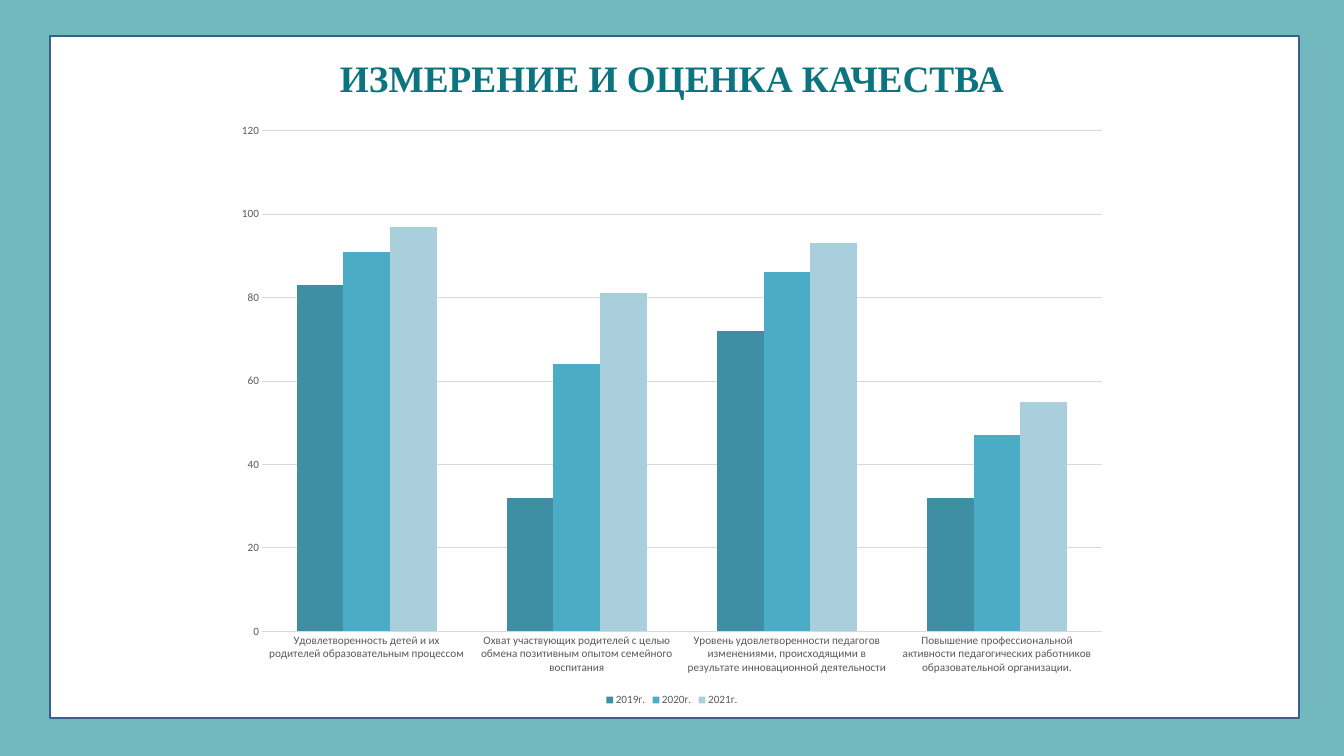
from dataclasses import dataclass

from pptx import Presentation
from pptx.chart.data import CategoryChartData
from pptx.dml.color import RGBColor
from pptx.enum.chart import XL_CHART_TYPE, XL_LEGEND_POSITION, XL_TICK_MARK
from pptx.enum.shapes import MSO_SHAPE
from pptx.enum.text import MSO_ANCHOR, MSO_AUTO_SIZE, PP_ALIGN
from pptx.slide import Slide
from pptx.text.text import Font
from pptx.util import Pt


@dataclass(frozen=True)
class Box:
    left: float
    top: float
    width: float
    height: float

    def size(self) -> tuple:
        return Pt(self.left), Pt(self.top), Pt(self.width), Pt(self.height)


@dataclass(frozen=True)
class Year:
    name: str
    marks: tuple
    color: str


WIDTH, HEIGHT = 1440, 810
GRAY = "595959"
GOALS = (
    "Удовлетворенность детей и их родителей образовательным процессом",
    "Охват участвующих родителей с целью обмена позитивным опытом семейного воспитания",
    "Уровень удовлетворенности педагогов изменениями, происходящими в результате инновационной деятельности",
    "Повышение профессиональной активности педагогических работников образовательной организации.",
)
YEARS = (
    Year("2019г.", (83, 32, 72, 32), "3E8FA4"),
    Year("2020г.", (91, 64, 86, 47), "4BACC6"),
    Year("2021г.", (97, 81, 93, 55), "A9CEDC"),
)


def paint(target, color: str) -> None:
    target.solid()
    target.fore_color.rgb = RGBColor.from_string(color)


def style(font: Font, name: str, size: float, color: str, bold: bool = False) -> None:
    font.name = name
    font.size = Pt(size)
    font.bold = bold
    paint(font.fill, color)


def add_panel(slide: Slide, box: Box) -> None:
    panel = slide.shapes.add_shape(MSO_SHAPE.RECTANGLE, *box.size())
    panel.shadow.inherit = False
    paint(panel.fill, "FFFFFF")
    paint(panel.line.fill, "3A5F8C")
    panel.line.width = Pt(2)


def add_title(slide: Slide, box: Box, text: str) -> None:
    frame = slide.shapes.add_textbox(*box.size()).text_frame
    frame.word_wrap = True
    frame.auto_size = MSO_AUTO_SIZE.SHAPE_TO_FIT_TEXT
    frame.vertical_anchor = MSO_ANCHOR.TOP
    line = frame.paragraphs[0]
    line.alignment = PP_ALIGN.CENTER
    run = line.add_run()
    run.text = text
    style(run.font, "Times New Roman", 40, "0B747F", True)


def add_bars(slide: Slide, box: Box) -> None:
    data = CategoryChartData()
    data.categories = GOALS
    for year in YEARS:
        data.add_series(year.name, year.marks)
    kind = XL_CHART_TYPE.COLUMN_CLUSTERED
    chart = slide.shapes.add_chart(kind, *box.size(), data).chart
    style(chart.font, "Calibri", 10, "000000")
    chart.has_title = False

    plot = chart.plots[0]
    plot.gap_width = 150
    plot.overlap = 0
    plot.vary_by_categories = False
    for bars, year in zip(plot.series, YEARS):
        paint(bars.format.fill, year.color)
        bars.invert_if_negative = False

    for axis in (chart.category_axis, chart.value_axis):
        axis.major_tick_mark = XL_TICK_MARK.NONE
        axis.minor_tick_mark = XL_TICK_MARK.NONE
        axis.format.line.fill.background()
        style(axis.tick_labels.font, "Calibri", 12, GRAY)

    scale = chart.value_axis
    scale.minimum_scale = 0
    scale.maximum_scale = 120
    scale.major_unit = 20
    scale.has_major_gridlines = True
    grid = scale.major_gridlines.format.line
    paint(grid.fill, "D9D9D9")
    grid.width = Pt(0.75)

    chart.has_legend = True
    chart.legend.position = XL_LEGEND_POSITION.BOTTOM
    chart.legend.include_in_layout = False
    style(chart.legend.font, "Calibri", 12, GRAY)


def main() -> None:
    deck = Presentation()
    deck.slide_width, deck.slide_height = Pt(WIDTH), Pt(HEIGHT)
    slide = deck.slides.add_slide(deck.slide_layouts[6])
    paint(slide.background.fill, "74B8BF")
    add_panel(slide, Box(54, 39, 1338, 730))
    add_bars(slide, Box(240, 120, 960, 640))
    add_title(slide, Box(0, 56, WIDTH, 55.5), "ИЗМЕРЕНИЕ И ОЦЕНКА КАЧЕСТВА")
    deck.save("out.pptx")


if __name__ == "__main__":
    main()
